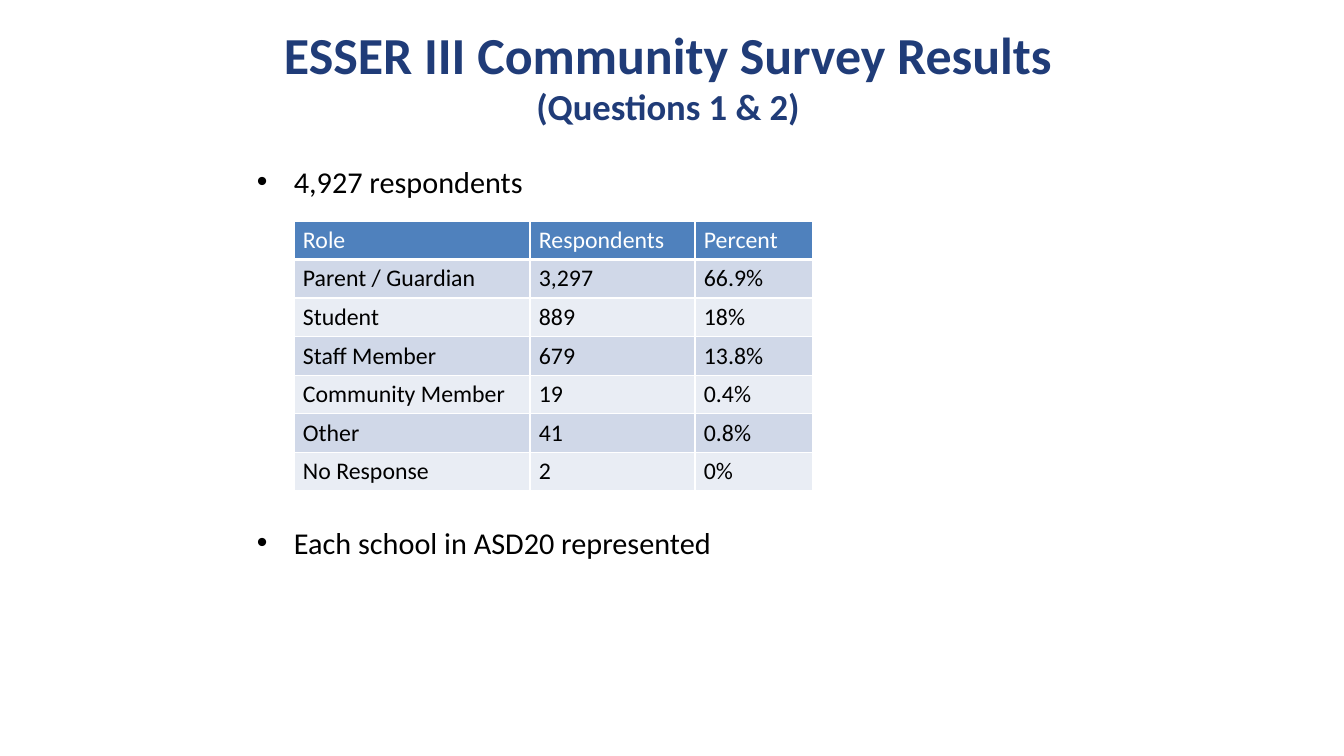
import lxml.etree
import pptx
import pptx.dml.color
import pptx.enum.text
import pptx.oxml.ns
import pptx.util

PX = 914400 / 100.8
COLORS = {"title": "203C78", "text": "000000", "white": "FFFFFF",
          "header": "4F81BD", "odd": "D0D8E8", "even": "E9EDF4"}
ANCHOR = pptx.enum.text.MSO_ANCHOR
TITLE = [("ESSER III Community Survey Results", 37.1), ("(Questions 1 & 2)", 26.2)]
BULLETS = [("4,927 respondents", 0), ("Each school in ASD20 represented", 232)]
ROLES = [
    ("Role", "Respondents", "Percent"),
    ("Parent / Guardian", "3,297", "66.9%"),
    ("Student", "889", "18%"),
    ("Staff Member", "679", "13.8%"),
    ("Community Member", "19", "0.4%"),
    ("Other", "41", "0.8%"),
    ("No Response", "2", "0%"),
]


def px(n):
    """Turn px into EMU."""
    return pptx.util.Emu(round(n * PX))


def rgb(name):
    """Look up a named colour."""
    return pptx.dml.color.RGBColor.from_string(COLORS[name])


def set_attrs(obj, values):
    """Set each attribute from a dict of format values."""
    for name, value in values.items():
        setattr(obj, name, value)


def format_font(p, size, color, bold=False):
    """Format the runs of a paragraph."""
    for r in p.runs:
        set_attrs(r.font, {"name": "Calibri", "size": pptx.util.Pt(size), "bold": bold})
        r.font.color.rgb = rgb(color)


def add_title(slide):
    """Place and fill the two-line title."""
    sp = slide.shapes.title
    set_attrs(sp, {"left": px(231), "top": px(26), "width": px(874), "height": px(103)})
    tf = sp.text_frame
    set_attrs(tf, {"word_wrap": True, "vertical_anchor": ANCHOR.MIDDLE,
                   "auto_size": pptx.enum.text.MSO_AUTO_SIZE.NONE,
                   "margin_left": px(7), "margin_right": px(7),
                   "margin_top": px(3), "margin_bottom": px(3)})
    tf.text = "\n".join(text for text, size in TITLE)
    for p, (text, size) in zip(tf.paragraphs, TITLE):
        set_attrs(p, {"alignment": pptx.enum.text.PP_ALIGN.CENTER,
                      "line_spacing": 0.97, "space_before": pptx.util.Pt(0)})
        format_font(p, size, "title", True)


def add_bullets(slide):
    """Add the bulleted statements above and below the table."""
    tf = slide.shapes.add_textbox(px(247), px(158), px(874), px(583)).text_frame
    tf.word_wrap = True
    tf.text = "\n".join(text for text, gap in BULLETS)
    for p, (text, gap) in zip(tf.paragraphs, BULLETS):
        p.space_before = pptx.util.Pt(gap)
        pPr = p._p.get_or_add_pPr()
        pPr.set("marL", str(px(37)))
        pPr.set("indent", str(-px(37)))
        for tag, key, value in (("a:buFont", "typeface", "Arial"), ("a:buChar", "char", "•")):
            lxml.etree.SubElement(pPr, pptx.oxml.ns.qn(tag)).set(key, value)
        format_font(p, 21.6, "text")


def add_borders(cell, widths):
    """Give a cell white borders with widths in points by side."""
    qn = pptx.oxml.ns.qn
    tcPr = cell._tc.get_or_add_tcPr()
    for side, width in widths.items():
        ln = lxml.etree.SubElement(tcPr, qn(f"a:ln{side}"), w=str(pptx.util.Pt(width)))
        fill = lxml.etree.SubElement(ln, qn("a:solidFill"))
        lxml.etree.SubElement(fill, qn("a:srgbClr"), val=COLORS["white"])


def add_role_table(slide):
    """Add the table of respondents by role."""
    widths = (236, 165, 118)
    table = slide.shapes.add_table(len(ROLES), len(widths), px(294), px(221),
                                   px(sum(widths)), px(270)).table
    for column, width in zip(table.columns, widths):
        column.width = px(width)
    for i, row in enumerate(ROLES):
        fill = "header" if i == 0 else "odd" if i % 2 else "even"
        borders = {"L": 1, "R": 1, "T": 3 if i == 1 else 1, "B": 3 if i == 0 else 1}
        for j, text in enumerate(row):
            cell = table.cell(i, j)
            set_attrs(cell, {"text": text, "vertical_anchor": ANCHOR.MIDDLE,
                             "margin_left": px(9), "margin_right": px(9),
                             "margin_top": px(4), "margin_bottom": px(4)})
            add_borders(cell, borders)
            cell.fill.solid()
            cell.fill.fore_color.rgb = rgb(fill)
            format_font(cell.text_frame.paragraphs[0], 17, "text" if i else "white")


def main():
    """Build the survey slide."""
    prs = pptx.Presentation()
    set_attrs(prs, {"slide_width": px(1344), "slide_height": px(756)})
    slide = prs.slides.add_slide(prs.slide_layouts[5])
    add_title(slide)
    add_bullets(slide)
    add_role_table(slide)
    prs.save("out.pptx")


if __name__ == "__main__":
    main()
